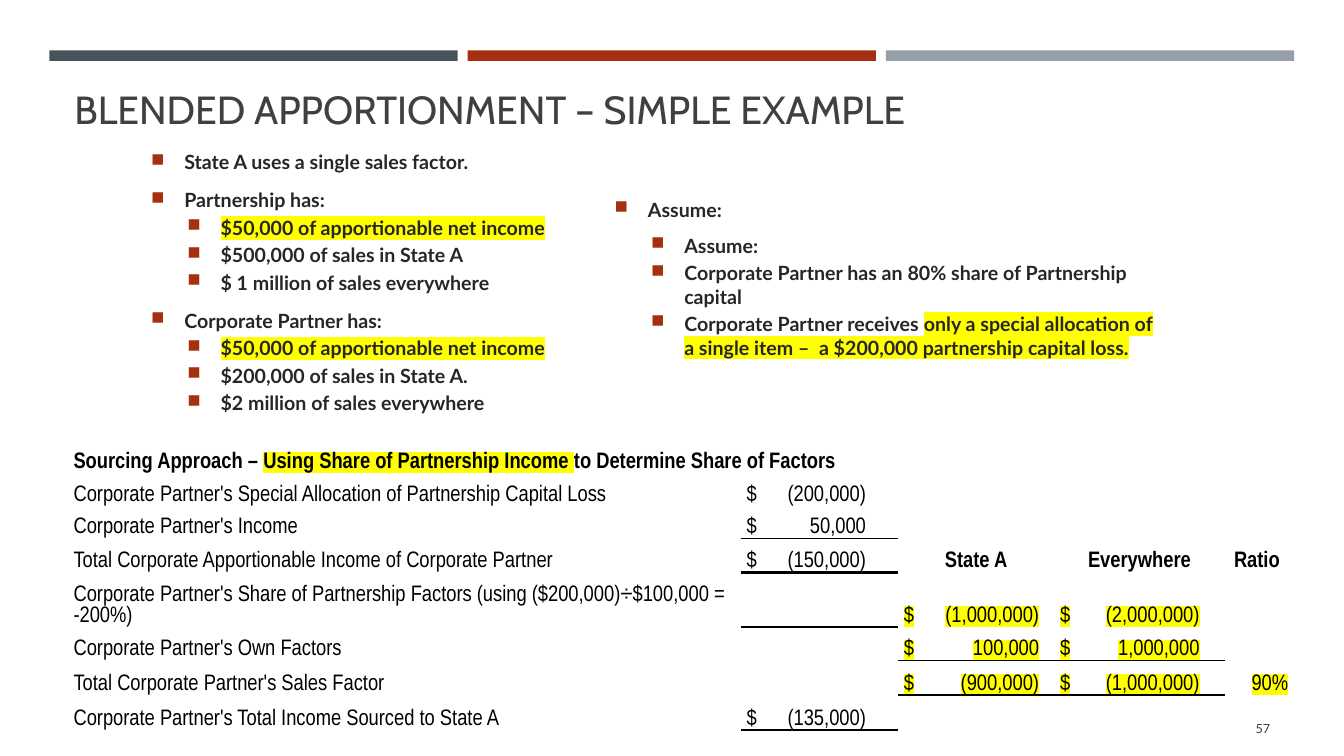
from dataclasses import dataclass

from lxml import etree
from pptx import Presentation
from pptx.dml.color import RGBColor
from pptx.enum.shapes import MSO_SHAPE
from pptx.enum.text import MSO_ANCHOR, PP_ALIGN
from pptx.oxml.ns import qn
from pptx.util import Inches, Pt

RECTANGLE = MSO_SHAPE.RECTANGLE
MIDDLE, BOTTOM = MSO_ANCHOR.MIDDLE, MSO_ANCHOR.BOTTOM
LEFT, CENTER, RIGHT = PP_ALIGN.LEFT, PP_ALIGN.CENTER, PP_ALIGN.RIGHT
WIDTH, HEIGHT = Inches(13.33), Inches(7.5)
COLUMNS, ROWS = 160, 90
NO_STYLE = "{2D5ABB26-0587-4C30-8999-92F81FD0307C}"


@dataclass(frozen=True)
class Theme:
    slate: str = "465359"
    rust: str = "A5300F"
    grey: str = "969FA7"
    heading: str = "404040"
    body: str = "262626"
    ink: str = "000000"
    marker: str = "FFFF00"
    title_font: str = "Cabin"
    body_font: str = "Lato"
    table_font: str = "Arial Narrow"
    title_size: float = 28
    body_size: float = 14
    table_size: float = 16
    number_size: float = 9


def x(columns):
    return round(WIDTH * columns / COLUMNS)


def y(rows):
    return round(HEIGHT * rows / ROWS)


def add_xml(parent, tag, **attributes):
    return etree.SubElement(parent, qn(tag), attributes)


class SlideBuilder:
    def __init__(self, slide, theme):
        self.slide, self.theme = slide, theme

    def bar(self, left, top, width, height, color):
        bar = self.slide.shapes.add_shape(RECTANGLE, x(left), y(top), x(width), y(height))
        bar.shadow.inherit = False
        bar.fill.solid()
        bar.fill.fore_color.rgb = RGBColor.from_string(color)
        bar.line.fill.background()

    def add_runs(self, paragraph, text, font, size, color, bold=False):
        """Text between | signs is highlighted."""
        for index, part in enumerate(text.split("|")):
            if not part:
                continue
            run = paragraph.add_run()
            run.text = part
            run.font.size, run.font.bold, run.font.name = Pt(size), bold, font
            run.font.color.rgb = RGBColor.from_string(color)
            if index % 2:
                highlight = etree.Element(qn("a:highlight"))
                add_xml(highlight, "a:srgbClr", val=self.theme.marker)
                run._r.get_or_add_rPr().find(qn("a:solidFill")).addnext(highlight)

    def frame(self, left, top, width, height, anchor):
        box = self.slide.shapes.add_textbox(x(left), y(top), x(width), y(height))
        box.text_frame.word_wrap = True
        box.text_frame.vertical_anchor = anchor
        return box.text_frame

    def label(self, area, text, font, size, anchor, align=LEFT):
        paragraph = self.frame(*area, anchor).paragraphs[0]
        paragraph.alignment = align
        self.add_runs(paragraph, text, font, size, self.theme.heading)

    def bullets(self, area, items):
        """Each item is (level, text, space after in points)."""
        theme = self.theme
        frame = self.frame(*area, MIDDLE)
        for index, (level, text, after) in enumerate(items):
            paragraph = frame.add_paragraph() if index else frame.paragraphs[0]
            paragraph.level = level
            paragraph.line_spacing = 1.0 if level else 1.1
            paragraph.space_before = Pt(theme.body_size * 0.2)
            paragraph.space_after = Pt(after)
            properties = paragraph._p.get_or_add_pPr()
            properties.set("marL", str(x(8.28 if level else 3.96)))
            properties.set("indent", str(-x(3.96)))
            color = add_xml(properties, "a:buClr")
            add_xml(color, "a:srgbClr", val=theme.rust)
            add_xml(properties, "a:buSzPct", val="92000")
            add_xml(properties, "a:buChar", char="■")
            self.add_runs(paragraph, text, theme.body_font, theme.body_size, theme.body, True)

    def edge(self, cell, side, points):
        properties = cell._tc.get_or_add_tcPr()
        line = etree.Element(qn(f"a:ln{side}"), w=str(Pt(points)))
        fill = add_xml(line, "a:solidFill")
        add_xml(fill, "a:srgbClr", val=self.theme.ink)
        properties.insert(len(properties) - 1, line)

    def table(self, left, top, widths, heights, entries, tabs, rules):
        """Entries hold (text, alignment, bold); rules hold widths of bottom lines."""
        theme = self.theme
        table = self.slide.shapes.add_table(
            len(heights), len(widths), x(left), y(top), x(sum(widths)), y(sum(heights))).table
        table.first_row = table.horz_banding = False
        table._tbl.tblPr.find(qn("a:tableStyleId")).text = NO_STYLE
        for column, width in zip(table.columns, widths):
            column.width = x(width)
        for row, height in zip(table.rows, heights):
            row.height = y(height)
        for cell in table.iter_cells():
            cell.margin_left = cell.margin_right = x(0.12)
            cell.margin_top, cell.margin_bottom = y(0.12), 0
            cell.vertical_anchor = BOTTOM
            cell.fill.background()
        table.cell(0, 0).merge(table.cell(0, len(widths) - 1))

        for (row, column), (text, align, bold) in entries.items():
            cell = table.cell(row, column)
            paragraph = cell.text_frame.paragraphs[0]
            paragraph.alignment = align
            if "\t" in text:
                cell.margin_left = x(0.7)
                stops = add_xml(paragraph._p.get_or_add_pPr(), "a:tabLst")
                add_xml(stops, "a:tab", pos=str(x(tabs[column])), algn="r")
            self.add_runs(paragraph, text, theme.table_font, theme.table_size, theme.ink, bold)

        for (row, column), points in sorted(rules.items()):
            self.edge(table.cell(row, column), "B", points)
            if row + 1 < len(heights):
                self.edge(table.cell(row + 1, column), "T", points)


def main():
    deck = Presentation()
    deck.slide_width, deck.slide_height = WIDTH, HEIGHT
    theme = Theme()
    page = SlideBuilder(deck.slides.add_slide(deck.slide_layouts[6]), theme)

    # Top bars
    for index, color in enumerate((theme.slate, theme.rust, theme.grey)):
        page.bar(5.88 + index * 49.8, 6, 48.6, 1.26, color)

    # Title and slide number
    page.label((7.68, 9.24, 144.72, 7.08), "BLENDED APPORTIONMENT – SIMPLE EXAMPLE",
               theme.title_font, theme.title_size, BOTTOM)
    page.label((138.6, 84.36, 13.8, 4.8), "57", theme.body_font, theme.number_size, MIDDLE, RIGHT)

    # Facts and assumptions
    page.bullets((16.8, 15.84, 52.68, 35.28), [
        (0, "State A uses a single sales factor.", 6),
        (0, "Partnership has:", 0),
        (1, "|$50,000 of apportionable net income|", 0),
        (1, "$500,000 of sales in State A", 0),
        (1, "$ 1 million of sales everywhere", 6),
        (0, "Corporate Partner has:", 0),
        (1, "|$50,000 of apportionable net income|", 0),
        (1, "$200,000 of sales in State A.", 0),
        (1, "$2 million of sales everywhere", 6),
    ])
    page.bullets((72, 18.72, 67.56, 28.56), [
        (0, "Assume:", 6),
        (1, "Assume:", 0),
        (1, "Corporate Partner has an 80% share of Partnership capital", 0),
        (1, "Corporate Partner receives |only a special allocation of a single item –  "
            "a $200,000 partnership capital loss.|", 0),
    ])

    # Sourcing table
    captions = [
        "Sourcing Approach – |Using Share of Partnership Income |to Determine Share of Factors",
        "Corporate Partner's Special Allocation of Partnership Capital Loss",
        "Corporate Partner's Income",
        "Total Corporate Apportionable Income of Corporate Partner",
        "Corporate Partner's Share of Partnership Factors (using ($200,000)÷$100,000 = -200%)",
        "Corporate Partner's Own Factors",
        "Total Corporate Partner's Sales Factor",
        "Corporate Partner's Total Income Sourced to State A",
    ]
    income = {1: "(200,000)", 2: "50,000", 3: "(150,000)", 7: "(135,000)"}
    factors = {4: ("(1,000,000)", "(2,000,000)"), 5: ("100,000", "1,000,000"),
               6: ("(900,000)", "(1,000,000)")}
    entries = {(row, 0): (text, LEFT, row == 0) for row, text in enumerate(captions)}
    entries |= {(row, 1): (f"$\t{amount}", LEFT, False) for row, amount in income.items()}
    entries |= {(3, column): (head, CENTER, True)
                for column, head in enumerate(("State A", "Everywhere", "Ratio"), 2)}
    entries |= {(row, column): (f"|$\t{amount}|", LEFT, False)
                for row, pair in factors.items() for column, amount in enumerate(pair, 2)}
    entries[6, 4] = ("|90%|", RIGHT, False)
    page.table(
        8.64, 52.2,
        widths=(79.56, 18.72, 18.6, 20.28, 7.68),
        heights=(4.08, 3.96, 3.84, 4.08, 4.08, 3.96, 4.08, 4.2),
        entries=entries,
        tabs={1: 14.2, 2: 16.1, 3: 16.6},
        rules={(2, 1): 0.5, (3, 1): 2, (5, 2): 0.5, (5, 3): 0.5,
               (6, 2): 2, (6, 3): 2, (7, 1): 2},
    )

    deck.save("out.pptx")


if __name__ == "__main__":
    main()
